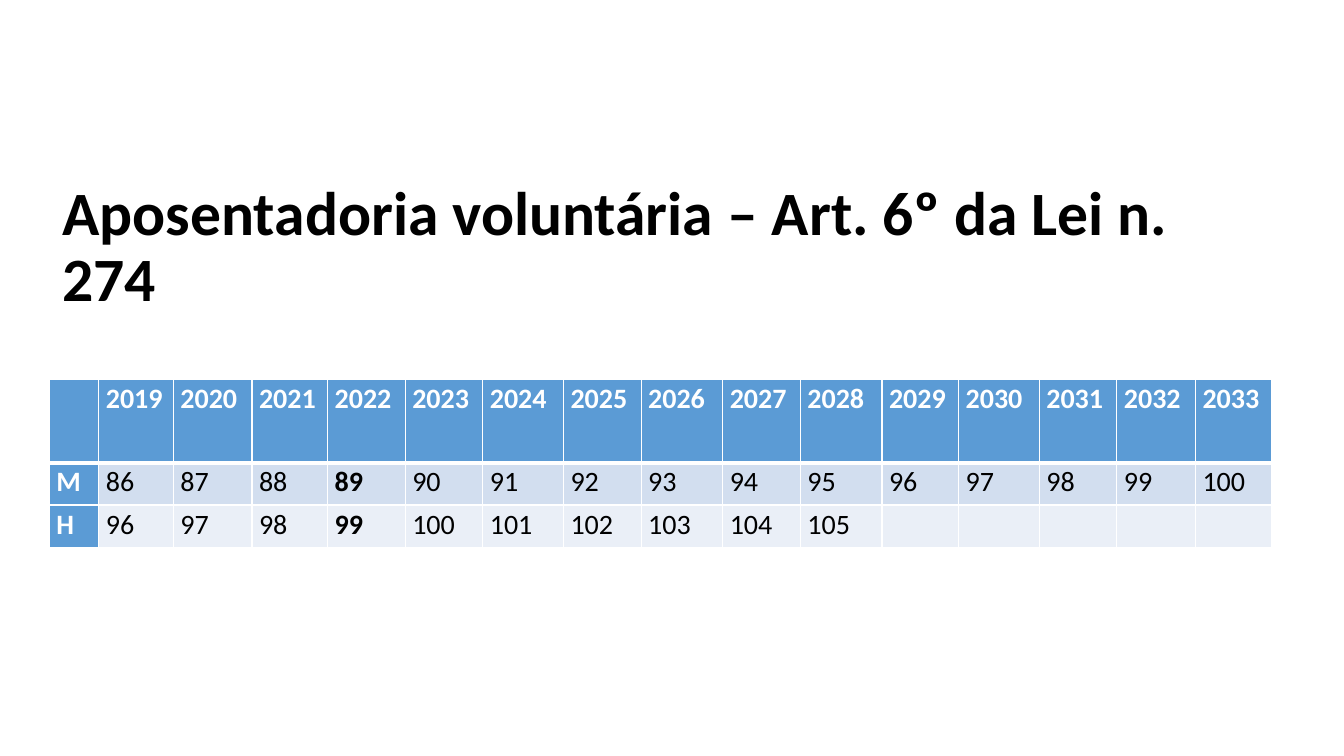
from dataclasses import dataclass

from lxml import etree
from pptx import Presentation
from pptx.dml.color import RGBColor
from pptx.enum.text import MSO_ANCHOR, MSO_AUTO_SIZE, PP_ALIGN
from pptx.oxml.ns import qn
from pptx.util import Emu, Pt

TITLE = "Aposentadoria voluntária – Art. 6º da Lei n. 274"
YEARS = list(range(2019, 2034))
POINTS = {"M": list(range(86, 101)), "H": list(range(96, 106))}
BOLD_YEAR = 2022

# Lengths in px, 100 to the inch
SLIDE = (1333, 750)
TITLE_BOX = (52, 191, 1190, 111)
TABLE_AT = (49, 376)
COLS = [49, 74, 78, 75, 77, 77, 80, 77, 81, 77, 81, 76, 80, 77, 78, 75]
ROWS = [83, 42, 42]
INSET = 7

LEFT, JUSTIFY = PP_ALIGN.LEFT, PP_ALIGN.JUSTIFY
MIDDLE, TOP = MSO_ANCHOR.MIDDLE, MSO_ANCHOR.TOP


@dataclass(frozen=True)
class Theme:
    font: str = "Calibri"
    head: str = "5B9BD5"
    bands: tuple = ("D2DEEF", "EAEFF7")
    light: str = "FFFFFF"
    dark: str = "000000"
    title: int = 44
    body: int = 20
    thin: int = 1
    thick: int = 3


THEME = Theme()


def px(n):
    return Emu(n * 9144)


def style(para, size, color, bold, align, spacing):
    para.alignment = align
    para.line_spacing = spacing
    form = {"name": THEME.font, "size": Pt(size), "bold": bold}
    for font in [para.font] + [run.font for run in para.runs]:
        for key, value in form.items():
            setattr(font, key, value)
        font.color.rgb = RGBColor.from_string(color)


def border(cell, row):
    """Draw white edges, thicker between the header and the body."""
    props = cell._tc.get_or_add_tcPr()
    for side in "LRTB":
        thick = (row, side) in ((0, "B"), (1, "T"))
        width = Pt(THEME.thick if thick else THEME.thin)
        line = etree.SubElement(props, qn(f"a:ln{side}"), w=str(width))
        fill = etree.SubElement(line, qn("a:solidFill"))
        etree.SubElement(fill, qn("a:srgbClr"), val=THEME.light)


def add_title(slide):
    title = slide.shapes.title
    title.left, title.top, title.width, title.height = map(px, TITLE_BOX)
    frame = title.text_frame
    frame.text = TITLE
    frame.word_wrap = True
    frame.auto_size = MSO_AUTO_SIZE.NONE
    frame.vertical_anchor = MIDDLE
    style(frame.paragraphs[0], THEME.title, THEME.dark, True, LEFT, 0.9)


def add_points(slide):
    grid = [["", *YEARS]] + [[key, *vals] for key, vals in POINTS.items()]
    size = (sum(COLS), sum(ROWS))
    table = slide.shapes.add_table(
        len(ROWS), len(COLS), *map(px, TABLE_AT + size)).table
    table.horz_banding = False
    for col, width in zip(table.columns, COLS):
        col.width = px(width)
    for row, height in zip(table.rows, ROWS):
        row.height = px(height)

    bold_col = YEARS.index(BOLD_YEAR) + 1
    form = {"margin_left": px(INSET), "margin_right": px(INSET),
            "margin_top": 0, "margin_bottom": 0, "vertical_anchor": TOP}
    for r, vals in enumerate(grid):
        for c in range(len(COLS)):
            cell = table.cell(r, c)
            head = r == 0 or c == 0
            if c < len(vals):
                cell.text = str(vals[c])
            for key, value in form.items():
                setattr(cell, key, value)
            border(cell, r)
            cell.fill.solid()
            fill = THEME.head if head else THEME.bands[r - 1]
            cell.fill.fore_color.rgb = RGBColor.from_string(fill)
            style(cell.text_frame.paragraphs[0], THEME.body,
                  THEME.light if head else THEME.dark,
                  head or c == bold_col, JUSTIFY, 1.07)


def main():
    prs = Presentation()
    prs.slide_width, prs.slide_height = map(px, SLIDE)
    slide = prs.slides.add_slide(prs.slide_layouts[5])
    add_points(slide)
    add_title(slide)
    prs.save("out.pptx")


if __name__ == "__main__":
    main()
